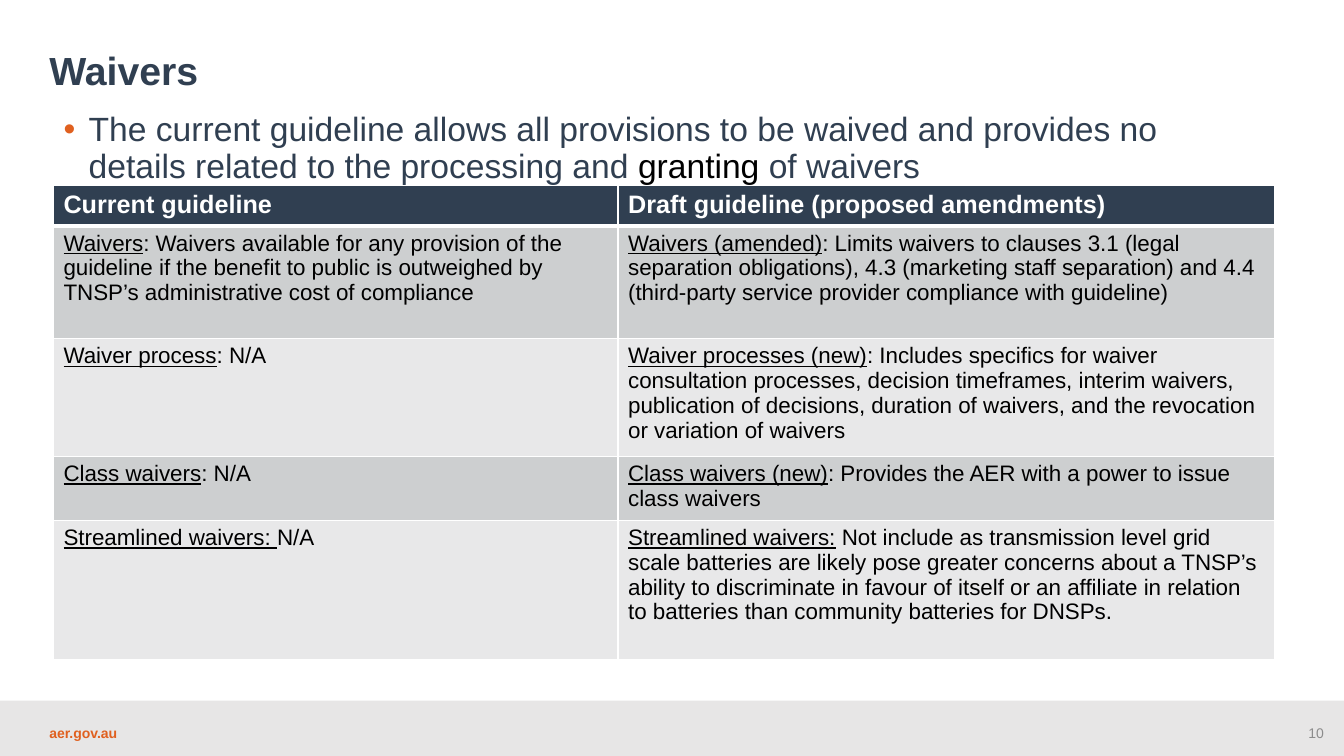
from lxml import etree
from pptx import Presentation
from pptx.dml.color import RGBColor
from pptx.enum import shapes, text
from pptx.oxml import ns
from pptx.util import Inches, Pt

NAVY = RGBColor(0x30, 0x3F, 0x51)
ORANGE = RGBColor(0xE0, 0x60, 0x1F)
BLACK = RGBColor(0, 0, 0)
WHITE = RGBColor(0xFF, 0xFF, 0xFF)
GREY = RGBColor(0x8C, 0x8C, 0x8C)
FOOTER_GREY = RGBColor(0xE7, 0xE6, 0xE6)
BANDS = [RGBColor(0xCD, 0xCF, 0xD0), RGBColor(0xE8, 0xE8, 0xE9)]

# Content
TITLE = "Waivers"
SUMMARY = [
    ("The current guideline allows all provisions to be waived and provides no "
     "details related to the processing and ", NAVY),
    ("granting", BLACK),
    (" of waivers", NAVY),
]
HEADINGS = ["Current guideline", "Draft guideline (proposed amendments)"]
# Each cell is an underlined lead followed by plain text
COMPARISON = [
    [("Waivers", ": Waivers available for any provision of the guideline if the benefit "
      "to public is outweighed by TNSP’s administrative cost of compliance"),
     ("Waivers (amended)", ": Limits waivers to clauses 3.1 (legal separation obligations), "
      "4.3 (marketing staff separation) and 4.4 (third-party service provider compliance "
      "with guideline)")],
    [("Waiver process", ": N/A"),
     ("Waiver processes (new)", ": Includes specifics for waiver consultation processes, "
      "decision timeframes, interim waivers, publication of decisions, duration of waivers, "
      "and the revocation or variation of waivers")],
    [("Class waivers", ": N/A"),
     ("Class waivers (new)", ": Provides the AER with a power to issue class waivers")],
    [("Streamlined waivers: ", "N/A"),
     ("Streamlined waivers:", " Not include as transmission level grid scale batteries are "
      "likely pose greater concerns about a TNSP’s ability to discriminate in favour of "
      "itself or an affiliate in relation to batteries than community batteries for DNSPs.")],
]
COLUMN_WIDTHS = [5.6, 6.51]
ROW_HEIGHTS = [0.36, 1.12, 1.12, 0.6, 1.38]
FOOTER_TEXTS = [
    ("aer.gov.au", 0.39, 1.22, text.PP_ALIGN.LEFT, ORANGE, True),
    ("10", 10.76, 2.47, text.PP_ALIGN.RIGHT, GREY, False),
]


def add_run(paragraph, words, size, color, bold=False, underline=False):
    run = paragraph.add_run()
    run.text = words
    font = run.font
    font.name, font.size, font.bold, font.underline = "Arial", Pt(size), bold, underline
    font.color.rgb = color


def place(shape, left, top, width, height):
    shape.left, shape.top = Inches(left), Inches(top)
    shape.width, shape.height = Inches(width), Inches(height)


def add_bullet(paragraph, color, indent):
    props = paragraph._p.get_or_add_pPr()
    props.set("marL", str(Inches(indent)))
    props.set("indent", str(-Inches(indent)))
    bullet_color = etree.SubElement(props, ns.qn("a:buClr"))
    etree.SubElement(bullet_color, ns.qn("a:srgbClr"), val=str(color))
    etree.SubElement(props, ns.qn("a:buFont"), typeface="Arial")
    etree.SubElement(props, ns.qn("a:buChar"), char="•")


def add_borders(cell, top, bottom):
    props = cell._tc.get_or_add_tcPr()
    sides = [("a:lnL", 1), ("a:lnR", 1), ("a:lnT", top), ("a:lnB", bottom)]
    for position, (side, width) in enumerate(sides):
        line = etree.Element(ns.qn(side), w=str(Pt(width)))
        fill = etree.SubElement(line, ns.qn("a:solidFill"))
        etree.SubElement(fill, ns.qn("a:srgbClr"), val=str(WHITE))
        props.insert(position, line)


prs = Presentation()
prs.slide_width, prs.slide_height = Inches(13.33), Inches(7.5)
slide = prs.slides.add_slide(prs.slide_layouts[1])

# Footer
band = slide.shapes.add_shape(shapes.MSO_SHAPE.RECTANGLE, Inches(0), Inches(6.95),
                              prs.slide_width, Inches(0.55))
band.shadow.inherit = False
band.fill.solid()
band.fill.fore_color.rgb = FOOTER_GREY
band.line.fill.background()
for words, left, width, align, color, bold in FOOTER_TEXTS:
    footer = slide.shapes.add_textbox(Inches(left), Inches(7.14), Inches(width), Inches(0.27))
    footer.text_frame.word_wrap = True
    footer.text_frame.vertical_anchor = text.MSO_ANCHOR.MIDDLE
    paragraph = footer.text_frame.paragraphs[0]
    paragraph.alignment = align
    add_run(paragraph, words, 10, color, bold)

# Title
title = slide.shapes.title
place(title, 0.39, 0.23, 11.71, 0.75)
title.text_frame.auto_size = text.MSO_AUTO_SIZE.NONE
title.text_frame.vertical_anchor = text.MSO_ANCHOR.BOTTOM
heading = title.text_frame.paragraphs[0]
heading.alignment = text.PP_ALIGN.LEFT
heading.line_spacing = 0.9
add_run(heading, TITLE, 28, NAVY, bold=True)

# Summary bullet
body = slide.placeholders[1]
place(body, 0.53, 1.07, 11.74, 5.39)
body.text_frame.auto_size = text.MSO_AUTO_SIZE.NONE
summary = body.text_frame.paragraphs[0]
summary.line_spacing = 0.9
summary.space_before = summary.space_after = Pt(4)
add_bullet(summary, ORANGE, 0.25)
for words, color in SUMMARY:
    add_run(summary, words, 24, color)

# Comparison table
table = slide.shapes.add_table(
    len(ROW_HEIGHTS), len(COLUMN_WIDTHS), Inches(0.53), Inches(1.84),
    Inches(sum(COLUMN_WIDTHS)), Inches(sum(ROW_HEIGHTS))).table
for column, width in zip(table.columns, COLUMN_WIDTHS):
    column.width = Inches(width)
for row, height in zip(table.rows, ROW_HEIGHTS):
    row.height = Inches(height)

for c, words in enumerate(HEADINGS):
    cell = table.cell(0, c)
    cell.fill.solid()
    cell.fill.fore_color.rgb = NAVY
    add_borders(cell, top=1, bottom=3)
    add_run(cell.text_frame.paragraphs[0], words, 18, WHITE, bold=True)

for r, entries in enumerate(COMPARISON, start=1):
    for c, (lead, detail) in enumerate(entries):
        cell = table.cell(r, c)
        cell.fill.solid()
        cell.fill.fore_color.rgb = BANDS[(r - 1) % 2]
        add_borders(cell, top=3 if r == 1 else 1, bottom=1)
        paragraph = cell.text_frame.paragraphs[0]
        add_run(paragraph, lead, 16, BLACK, underline=True)
        add_run(paragraph, detail, 16, BLACK)

prs.save("out.pptx")
